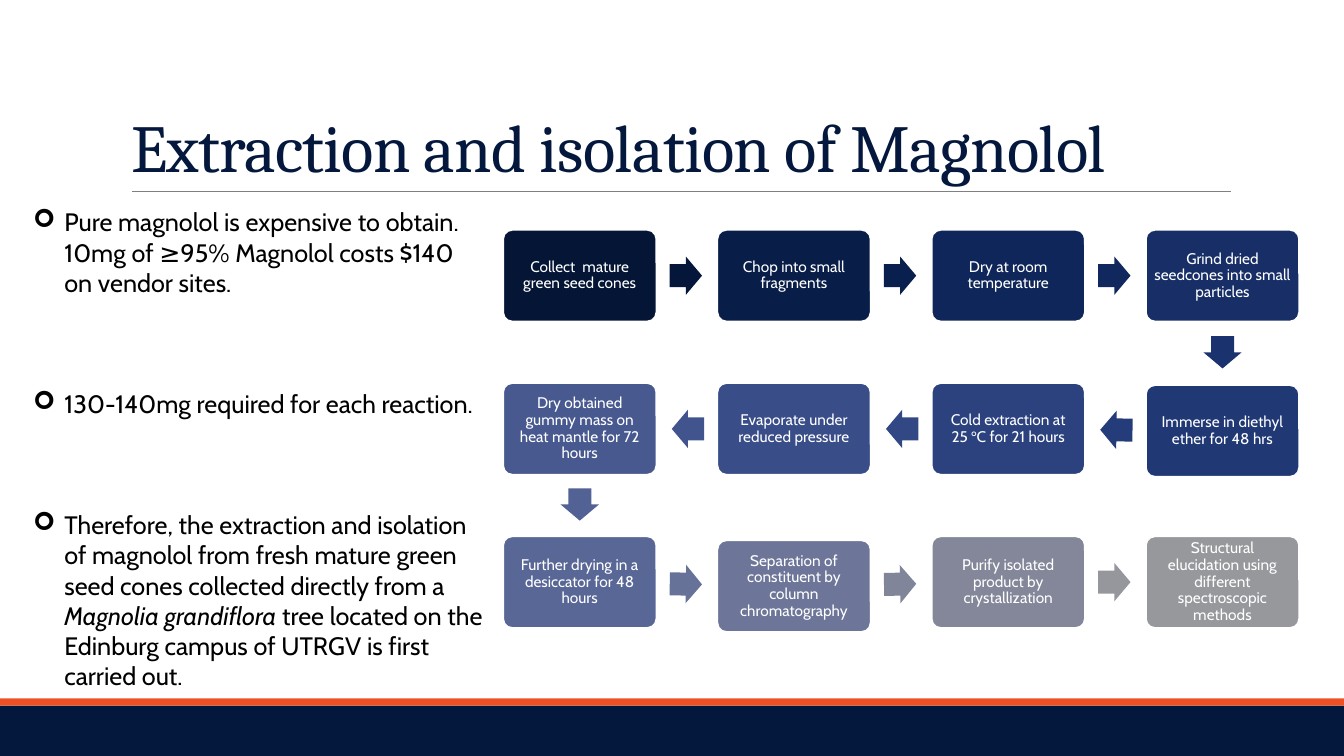
from math import atan2, cos, degrees, sin

from lxml.etree import SubElement
from pptx import Presentation
from pptx.dml.color import RGBColor
from pptx.enum.shapes import MSO_CONNECTOR, MSO_SHAPE
from pptx.enum.text import MSO_ANCHOR, PP_ALIGN
from pptx.oxml.ns import qn
from pptx.util import Inches, Pt

# Content
TITLE = "Extraction and isolation of Magnolol"
BULLETS = [
    [("Pure magnolol is expensive to obtain. 10mg of ≥95% Magnolol costs $140 on vendor sites.", False)],
    [("130-140mg required for each reaction.", False)],
    [
        ("Therefore, the extraction and isolation of magnolol from fresh mature green "
         "seed cones collected directly from a ", False),
        ("Magnolia grandiflora ", True),
        ("tree located on the Edinburg campus of UTRGV is first carried out.", False),
    ],
]
# Step text, box colour, colour of the arrow to the next step
STEPS = [
    ("Collect  mature green seed cones", "041536", "041639"),
    ("Chop into small fragments", "081D48", "091F4D"),
    ("Dry at room temperature", "0E2659", "10285E"),
    ("Grind dried seedcones into small particles", "172E67", "1A326D"),
    ("Immerse in diethyl ether for 48 hrs", "203874", "253C7A"),
    ("Cold extraction at\n25 °C for 21 hours", "2C427F", "324885"),
    ("Evaporate under reduced pressure", "394D88", "42548E"),
    ("Dry obtained gummy mass on heat mantle for 72 hours", "485990", "536295"),
    ("Further drying in a desiccator for 48 hours", "596796", "677299"),
    ("Separation of constituent by column chromatography", "6D7699", "808599"),
    ("Purify isolated product by crystallization", "838799", "96979C"),
    ("Structural elucidation using different spectroscopic methods", "97989B", None),
]
STEP_DROPS = {4: 0.02, 9: 0.04}  # steps that sit slightly below their row

# Layout in inches
COLUMNS = 4
FLOW_LEFT, FLOW_TOP = 4.99, 2.28
COLUMN_PITCH, ROW_PITCH = 2.125, 1.52
BOX_WIDTH, BOX_HEIGHT = 1.52, 0.91
ARROW_LENGTH, ARROW_WIDTH = 0.32, 0.38
ARROW_SETBACK = 0.01

NAVY, ORANGE, GRAY, BLACK, WHITE = "04173C", "F05023", "808080", "000000", "FFFFFF"
BODY_FONT = "Cabin"


def color(value):
    return RGBColor.from_string(value)


def add_run(paragraph, text, size, font, text_color, italic=False):
    run = paragraph.add_run()
    run.text = text
    run.font.size = Pt(size)
    run.font.name = font
    run.font.italic = italic
    run.font.color.rgb = color(text_color)
    return run


def add_filled_shape(slide, kind, left, top, width, height, fill):
    shape = slide.shapes.add_shape(kind, Inches(left), Inches(top), Inches(width), Inches(height))
    shape.shadow.inherit = False
    shape.fill.solid()
    shape.fill.fore_color.rgb = color(fill)
    shape.line.fill.background()
    return shape


def step_center(index):
    """Rows run left to right, then right to left, in turn."""
    row, column = divmod(index, COLUMNS)
    if row % 2:
        column = COLUMNS - 1 - column
    return (FLOW_LEFT + column * COLUMN_PITCH + BOX_WIDTH / 2,
            FLOW_TOP + row * ROW_PITCH + BOX_HEIGHT / 2 + STEP_DROPS.get(index, 0))


def add_frame(slide):
    add_filled_shape(slide, MSO_SHAPE.RECTANGLE, 0, 7, 13.33, 0.5, NAVY)
    add_filled_shape(slide, MSO_SHAPE.RECTANGLE, 0, 6.93, 13.33, 0.07, ORANGE)
    rule = slide.shapes.add_connector(
        MSO_CONNECTOR.STRAIGHT, Inches(1.31), Inches(1.9), Inches(12.21), Inches(1.9))
    rule.line.color.rgb = color(GRAY)
    rule.line.width = Pt(0.5)
    SubElement(rule._element.spPr, qn("a:effectLst"))


def add_title(slide):
    title = slide.shapes.title
    title.left, title.top = Inches(1.2), Inches(0.31)
    title.width, title.height = Inches(11), Inches(1.59)
    title.text_frame.vertical_anchor = MSO_ANCHOR.BOTTOM
    paragraph = title.text_frame.paragraphs[0]
    paragraph.alignment = PP_ALIGN.LEFT
    paragraph.line_spacing = 0.85
    run = add_run(paragraph, TITLE, 48, "Cambria", NAVY)
    run.font._element.set("spc", "-50")


def add_bullets(slide):
    box = slide.shapes.add_textbox(Inches(0.23), Inches(2), Inches(4.68), Inches(4.65))
    frame = box.text_frame
    frame.word_wrap = True
    for index, runs in enumerate(BULLETS):
        paragraph = frame.add_paragraph() if index else frame.paragraphs[0]
        properties = paragraph._p.get_or_add_pPr()
        properties.set("marL", str(Inches(0.31)))
        properties.set("indent", str(Inches(-0.31)))
        SubElement(properties, qn("a:buFont")).set("typeface", "Wingdings")
        SubElement(properties, qn("a:buChar")).set("char", "➢")
        if index:
            paragraph.space_before = Pt(65)
        for text, italic in runs:
            add_run(paragraph, text, 18, BODY_FONT, BLACK, italic)


def add_step(slide, index, text, fill):
    center_x, center_y = step_center(index)
    box = add_filled_shape(
        slide, MSO_SHAPE.ROUNDED_RECTANGLE, center_x - BOX_WIDTH / 2,
        center_y - BOX_HEIGHT / 2, BOX_WIDTH, BOX_HEIGHT, fill)
    box.adjustments[0] = 0.1
    box.line.color.rgb = color(WHITE)
    box.line.width = Pt(1.25)
    frame = box.text_frame
    frame.word_wrap = True
    frame.vertical_anchor = MSO_ANCHOR.MIDDLE
    frame.margin_left = frame.margin_right = Inches(0.05)
    frame.margin_top = frame.margin_bottom = Inches(0.05)
    paragraph = frame.paragraphs[0]
    paragraph.alignment = PP_ALIGN.CENTER
    paragraph.line_spacing = 0.9
    for line_number, line in enumerate(text.split("\n")):
        if line_number:
            paragraph.add_line_break()
        before, degree, after = line.partition("°")
        for part, font in ((before, BODY_FONT), (degree, "Calibri"), (after, BODY_FONT)):
            if part:
                add_run(paragraph, part, 11, font, WHITE)


def add_step_arrow(slide, index, fill):
    """Place an arrow midway to the next step, turned towards it."""
    start_x, start_y = step_center(index)
    end_x, end_y = step_center(index + 1)
    angle = atan2(end_y - start_y, end_x - start_x)
    center_x = (start_x + end_x) / 2 - ARROW_SETBACK * cos(angle)
    center_y = (start_y + end_y) / 2 - ARROW_SETBACK * sin(angle)
    arrow = add_filled_shape(
        slide, MSO_SHAPE.RIGHT_ARROW, center_x - ARROW_LENGTH / 2,
        center_y - ARROW_WIDTH / 2, ARROW_LENGTH, ARROW_WIDTH, fill)
    arrow.adjustments[0] = 0.6
    arrow.adjustments[1] = 0.5
    arrow.rotation = degrees(angle) % 360


def main():
    presentation = Presentation()
    presentation.slide_width, presentation.slide_height = Inches(13.33), Inches(7.5)
    slide = presentation.slides.add_slide(presentation.slide_layouts[5])
    add_frame(slide)
    add_title(slide)
    add_bullets(slide)
    # Process flow
    for index, (text, fill, arrow_fill) in enumerate(STEPS):
        add_step(slide, index, text, fill)
        if arrow_fill:
            add_step_arrow(slide, index, arrow_fill)
    presentation.save("out.pptx")


if __name__ == "__main__":
    main()
